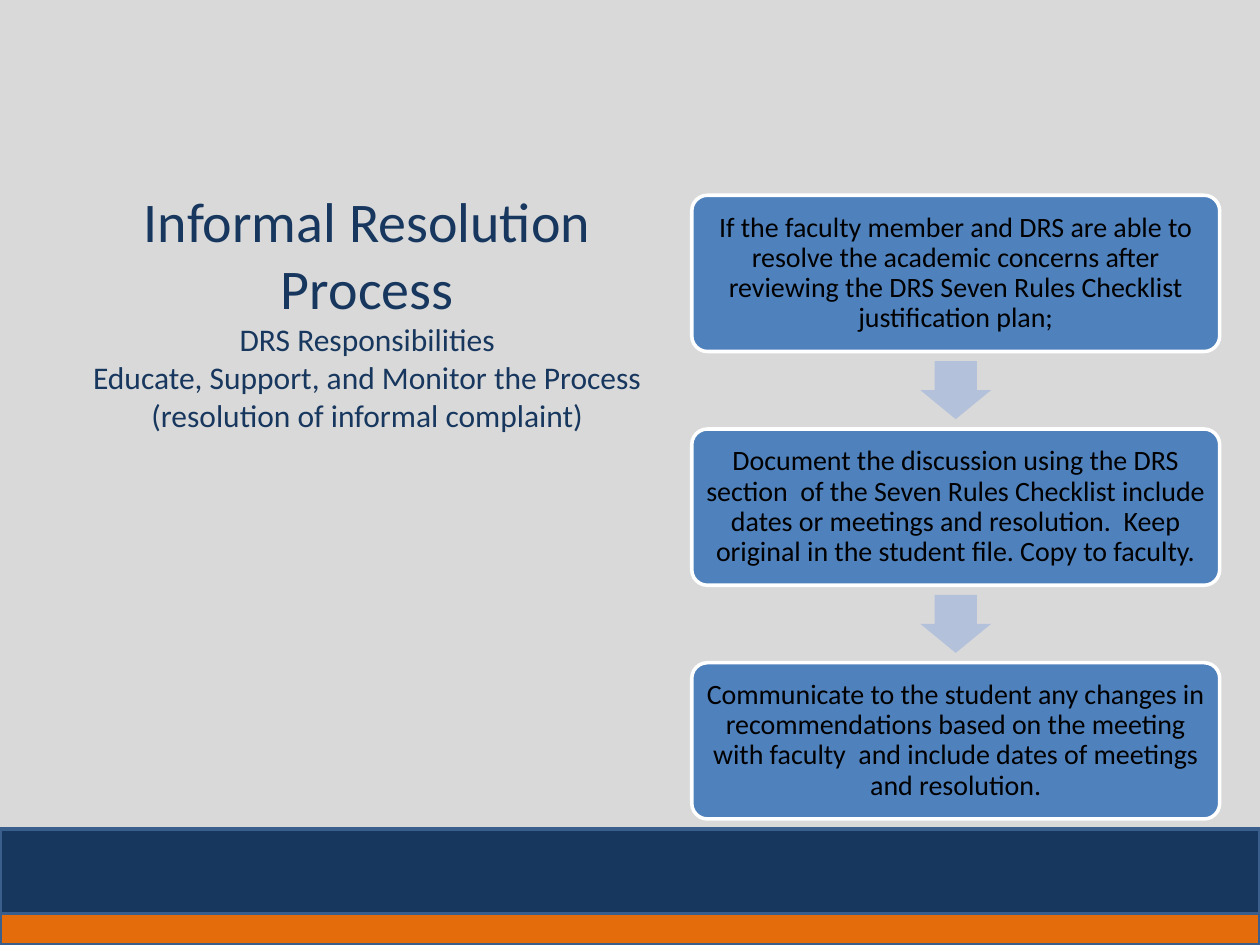
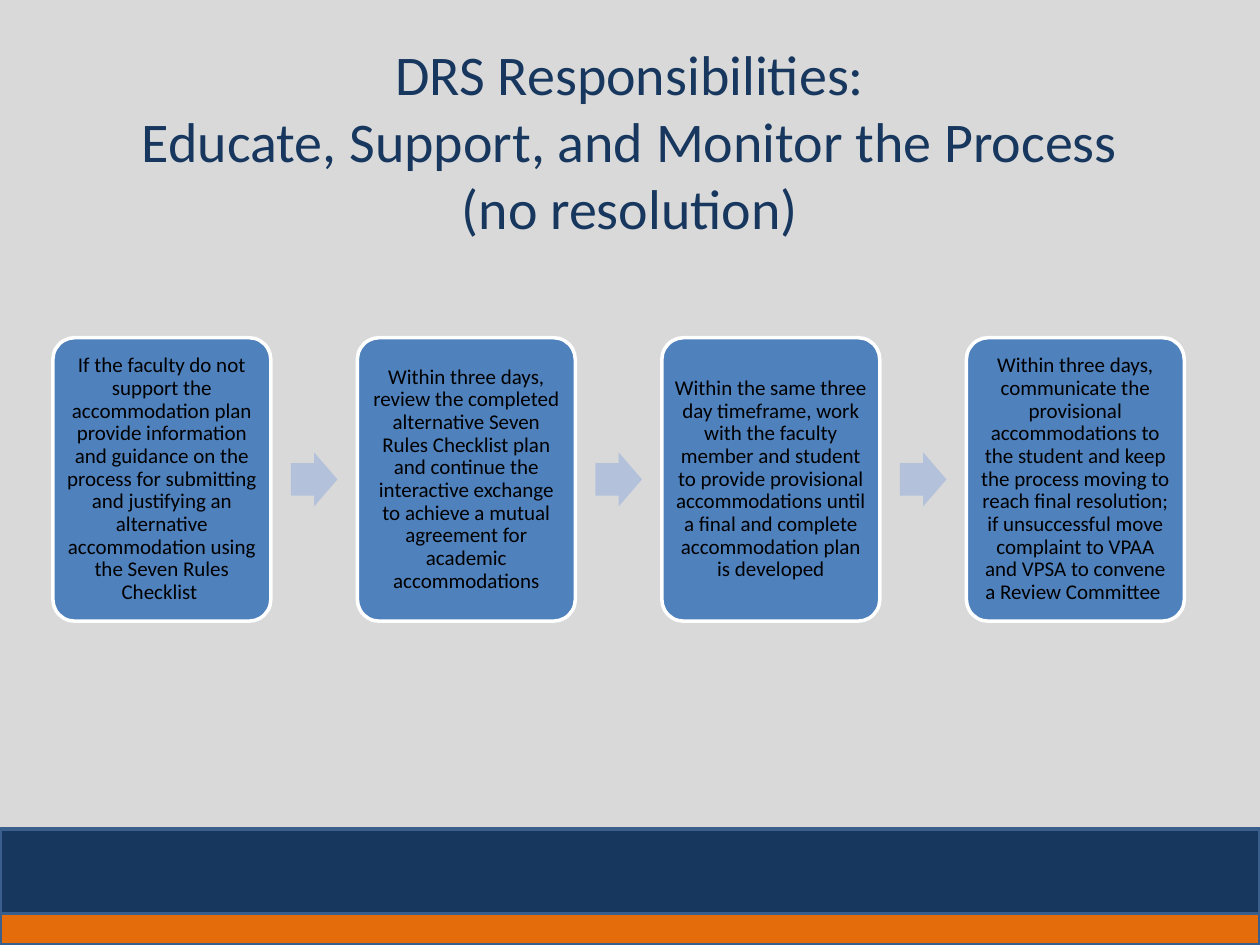
from copy import deepcopy

from pptx import Presentation
from pptx.dml.color import RGBColor
from pptx.enum.shapes import MSO_SHAPE as Shape
from pptx.enum.text import MSO_ANCHOR as Anchor, MSO_AUTO_SIZE as AutoSize, PP_ALIGN as Align
from pptx.util import Inches, Pt

FONT = "Calibri"
GREY, NAVY, ORANGE, BAND_EDGE = "D9D9D9", "17375E", "E46C0A", "3A5F8C"
CARD, ARROW, WHITE, BLACK = "4F81BD", "B3C1DB", "FFFFFF", "000000"
TITLE_SIZE, SUBTITLE_SIZE = 32, 18
BAND_TOP, BANDS = 6.58, [(0.92, ORANGE), (0.67, NAVY)]
FIRST_BAND_ID = 100

RESOLVED_STEPS = [
    "If the faculty member and DRS are able to resolve the academic concerns after "
    "reviewing the DRS Seven Rules Checklist justification plan;",
    "Document the discussion using the DRS section  of the Seven Rules Checklist include "
    "dates or meetings and resolution.  Keep original in the student file. Copy to faculty.",
    "Communicate to the student any changes in recommendations based on the meeting "
    "with faculty  and include dates of meetings and resolution.",
]
UNRESOLVED_STEPS = [
    "If the faculty do not support the accommodation plan provide information and guidance "
    "on the process for submitting and justifying an alternative accommodation using the "
    "Seven Rules Checklist ",
    "Within three days, review the completed alternative Seven Rules Checklist plan and "
    "continue the interactive exchange to achieve a mutual agreement for academic "
    "accommodations",
    "Within the same three day timeframe, work with the faculty member and student to "
    "provide provisional accommodations until a final and complete accommodation plan is "
    "developed",
    "Within three days, communicate the provisional accommodations to the student and keep "
    "the process moving to reach final resolution; if unsuccessful move complaint to VPAA "
    "and VPSA to convene a Review Committee ",
]


def paint(fill, color):
    """Make a fill one solid colour."""
    fill.solid()
    fill.fore_color.rgb = RGBColor.from_string(color)


def break_after(paragraph, run):
    """Add a line break after the last run, in that run's format."""
    paragraph.add_line_break()
    line_break = run._r.getnext()
    line_break.append(deepcopy(run._r.rPr))


def write(frame, lines, color=BLACK, spacing=1.0, inset=None):
    """Write (text, size) lines as one centred paragraph with line breaks."""
    frame.word_wrap = True
    frame.auto_size = AutoSize.NONE
    frame.vertical_anchor = Anchor.MIDDLE
    if inset is not None:
        frame.margin_left = frame.margin_right = Inches(inset)
        frame.margin_top = frame.margin_bottom = Inches(inset)
    paragraph = frame.paragraphs[0]
    paragraph.alignment = Align.CENTER
    paragraph.line_spacing = spacing
    for number, (text, size) in enumerate(lines):
        if number > 0:
            break_after(paragraph, run)
        run = paragraph.add_run()
        run.text = text
        run.font.name, run.font.size = FONT, Pt(size)
        run.font.color.rgb = RGBColor.from_string(color)


def add_block(slide, kind, box, fill, edge=None, adjustments=()):
    """Add a flat preset shape, outlined when an edge colour is given."""
    block = slide.shapes.add_shape(kind, *map(Inches, box))
    block.shadow.inherit = False
    paint(block.fill, fill)
    if edge:
        paint(block.line.fill, edge)
        block.line.width = Pt(2)
    else:
        block.line.fill.background()
    for index, value in enumerate(adjustments):
        block.adjustments[index] = value
    return block


def style_master(master, slide):
    """Set the shared background and move the footer bands from a slide to the master."""
    paint(master.background.fill, GREY)
    first_placeholder = master.placeholders[0].element
    for band_id, (height, color) in enumerate(BANDS, start=FIRST_BAND_ID):
        band = add_block(slide, Shape.RECTANGLE, (0, BAND_TOP, 10, height), color, BAND_EDGE)
        band.element.nvSpPr.cNvPr.set("id", str(band_id))
        first_placeholder.addprevious(band.element)


def add_title(slide, box, lines):
    """Place and fill the title placeholder."""
    title = slide.shapes.title
    title.left, title.top, title.width, title.height = map(Inches, box)
    write(title.text_frame, lines, color=NAVY)


def add_arrow(slide, center, size, rotation):
    """Add an arrow of a given length and breadth around a centre."""
    (center_x, center_y), (length, breadth) = center, size
    box = (center_x - length / 2, center_y - breadth / 2, length, breadth)
    arrow = add_block(slide, Shape.RIGHT_ARROW, box, ARROW, adjustments=[0.6, 0.5])
    arrow.rotation = rotation


def add_flow(slide, box, steps, card_length, arrow_size, size, inset, vertical=False):
    """Spread step cards evenly along the box, with an arrow in each gap."""
    left, top, width, height = box
    flow_length = height if vertical else width
    pitch = (flow_length - card_length) / (len(steps) - 1)
    to_gap_middle = (card_length + pitch) / 2
    for index, step in enumerate(steps):
        start = index * pitch
        gap_middle = start + to_gap_middle
        if vertical:
            card_box = (left, top + start, width, card_length)
            arrow_center = (left + width / 2, top + gap_middle)
        else:
            card_box = (left + start, top, card_length, height)
            arrow_center = (left + gap_middle, top + height / 2)
        card = add_block(slide, Shape.ROUNDED_RECTANGLE, card_box, CARD, WHITE, [0.1])
        write(card.text_frame, [(step, size)], spacing=0.9, inset=inset)
        if index < len(steps) - 1:
            add_arrow(slide, arrow_center, arrow_size, rotation=90 if vertical else 0)


def build_resolved(slide):
    """Build the slide on an informal complaint that is resolved."""
    add_title(slide, (0.5, 1, 4.83, 2.92), [
        ("Informal Resolution Process", TITLE_SIZE),
        ("DRS Responsibilities", SUBTITLE_SIZE),
        ("Educate, Support, and Monitor the Process", SUBTITLE_SIZE),
        ("(resolution of informal complaint)", SUBTITLE_SIZE),
    ])
    add_flow(slide, (5.49, 1.55, 4.19, 4.95), RESOLVED_STEPS, card_length=1.24,
             arrow_size=(0.46, 0.56), size=16, inset=0.07, vertical=True)


def build_unresolved(slide):
    """Build the slide on a complaint without resolution."""
    add_title(slide, (0.5, 0.3, 9, 1.62), [
        ("DRS Responsibilities:", TITLE_SIZE),
        ("Educate, Support, and Monitor the Process", TITLE_SIZE),
        ("(no resolution)", TITLE_SIZE),
    ])
    add_flow(slide, (0.42, 2.68, 8.98, 2.25), UNRESOLVED_STEPS, card_length=1.73,
             arrow_size=(0.37, 0.43), size=12, inset=0.05)


def main():
    """Build both slides and save the presentation."""
    prs = Presentation()
    prs.slide_width, prs.slide_height = Inches(10), Inches(7.5)
    title_only = prs.slide_layouts.get_by_name("Title Only")
    resolved, unresolved = (prs.slides.add_slide(title_only) for _ in range(2))
    style_master(prs.slide_master, resolved)
    build_resolved(resolved)
    build_unresolved(unresolved)
    prs.save("out.pptx")


if __name__ == "__main__":
    main()
